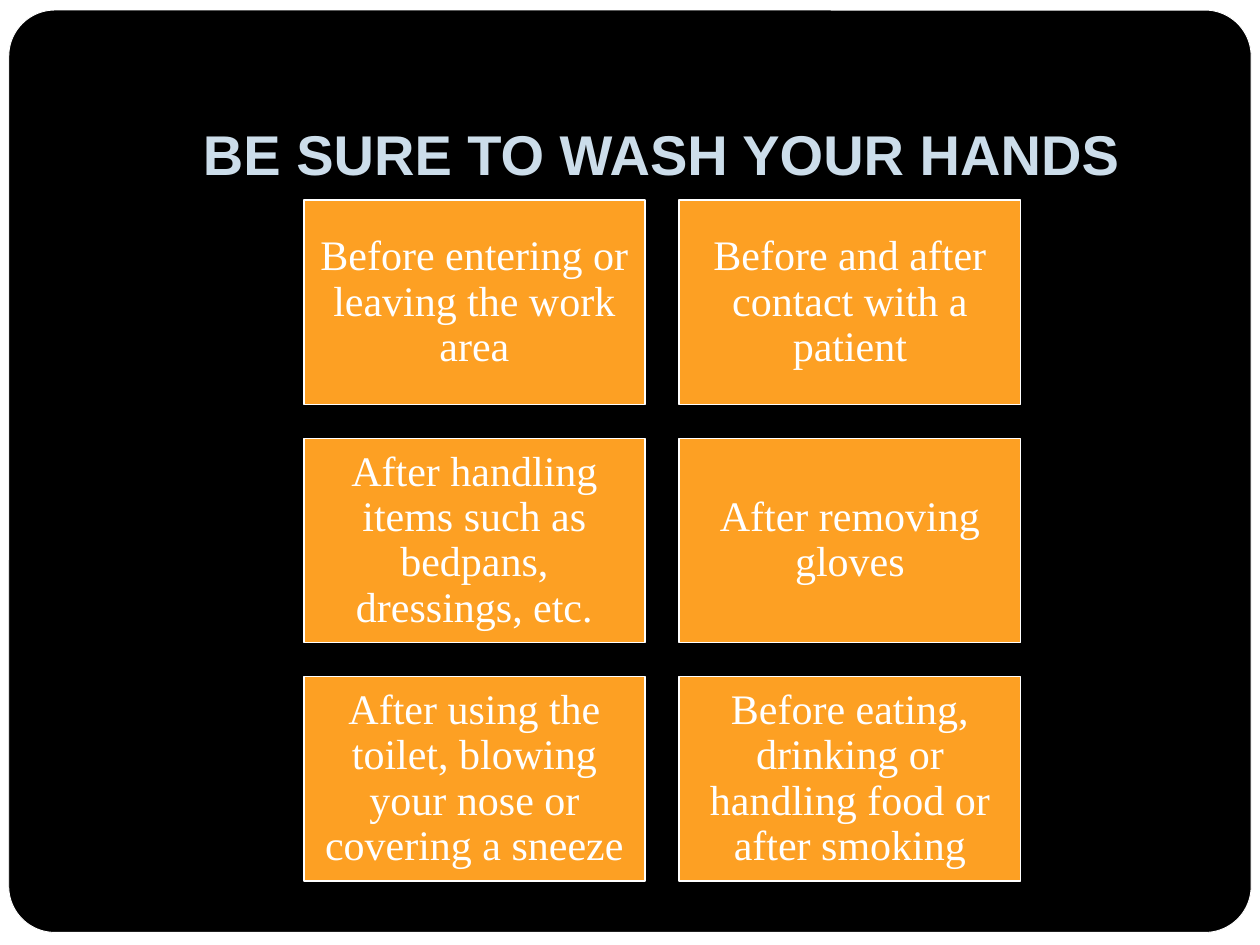
from pptx import Presentation
from pptx.dml.color import RGBColor
from pptx.enum.shapes import MSO_SHAPE as Shape
from pptx.enum.text import MSO_ANCHOR as Anchor, PP_ALIGN as Align
from pptx.util import Inches, Pt

COLORS = {"black": "000000", "white": "FFFFFF", "title": "CCDDEA", "card": "FDA023"}
TITLE = "BE SURE TO WASH YOUR HANDS"
OCCASIONS = [
    "Before entering or leaving the work area",
    "Before and after contact with a patient",
    "After handling items such as bedpans, dressings, etc.",
    "After removing gloves",
    "After using the toilet, blowing your nose or covering a sneeze",
    "Before eating, drinking or handling food or after smoking",
]
TITLE_FONT = {"name": "Arial", "size": Pt(32), "bold": True}
CARD_FONT = {"name": "Times New Roman", "size": Pt(24), "bold": False}


def color(name):
    """Return the named colour."""
    return RGBColor.from_string(COLORS[name])


def set_values(target, values):
    """Set attributes from a dict of format values."""
    for name, value in values.items():
        setattr(target, name, value)


def add_panel(slide, kind, box, fill, line_width=None):
    """Add a filled shape, with a white outline if a width is given."""
    shape = slide.shapes.add_shape(kind, *map(Inches, box))
    shape.shadow.inherit = False
    shape.fill.solid()
    shape.fill.fore_color.rgb = color(fill)
    if line_width is None:
        shape.line.fill.background()
    else:
        shape.line.color.rgb = color("white")
        shape.line.width = Pt(line_width)
    return shape


def write_text(shape, text, font, font_color, anchor, top=0.1, spacing=1.0):
    """Write one centred, wrapped paragraph into a shape."""
    frame = shape.text_frame
    set_values(frame, {
        "word_wrap": True, "vertical_anchor": anchor,
        "margin_left": Inches(0.1), "margin_right": Inches(0.1),
        "margin_top": Inches(top), "margin_bottom": Inches(0.1),
    })
    paragraph = frame.paragraphs[0]
    set_values(paragraph, {"alignment": Align.CENTER, "line_spacing": spacing})
    run = paragraph.add_run()
    run.text = text
    set_values(run.font, font)
    run.font.color.rgb = color(font_color)


def add_backdrop(slide, box):
    """Place a white sheet with a rounded black panel inside the box."""
    left, top, width, height = box
    add_panel(slide, Shape.RECTANGLE, box, "white")
    inner = (left + 0.07, top + 0.08, width - 0.14, height - 0.18)
    panel = add_panel(slide, Shape.ROUNDED_RECTANGLE, inner, "black", 0.5)
    panel.adjustments[0] = 0.05


def add_title(slide, box):
    """Place the heading at the bottom of the box."""
    heading = slide.shapes.add_textbox(*map(Inches, box))
    write_text(heading, TITLE, TITLE_FONT, "title", Anchor.BOTTOM, top=0.05)


def add_card_grid(slide, box, columns=2, gap=0.27):
    """Fill the box with an evenly spaced grid of cards."""
    left, top, width, height = box
    rows = len(OCCASIONS) // columns
    card_width = (width - gap * (columns - 1)) / columns
    card_height = (height - gap * (rows - 1)) / rows
    for index, text in enumerate(OCCASIONS):
        row, column = divmod(index, columns)
        card_box = (left + column * (card_width + gap),
                    top + row * (card_height + gap), card_width, card_height)
        card = add_panel(slide, Shape.RECTANGLE, card_box, "card", 1)
        write_text(card, text, CARD_FONT, "white", Anchor.MIDDLE, spacing=0.9)


def main():
    """Build and save the hand-washing slide."""
    presentation = Presentation()
    set_values(presentation, {"slide_width": Inches(10), "slide_height": Inches(7.5)})
    slide = presentation.slides.add_slide(presentation.slide_layouts[6])
    slide.background.fill.solid()
    slide.background.fill.fore_color.rgb = color("black")
    add_backdrop(slide, (0, 0, 10, 7.5))
    add_title(slide, (1, 0.33, 8.5, 1.25))
    add_card_grid(slide, (2.41, 1.59, 5.69, 5.4))
    presentation.save("out.pptx")


if __name__ == "__main__":
    main()
